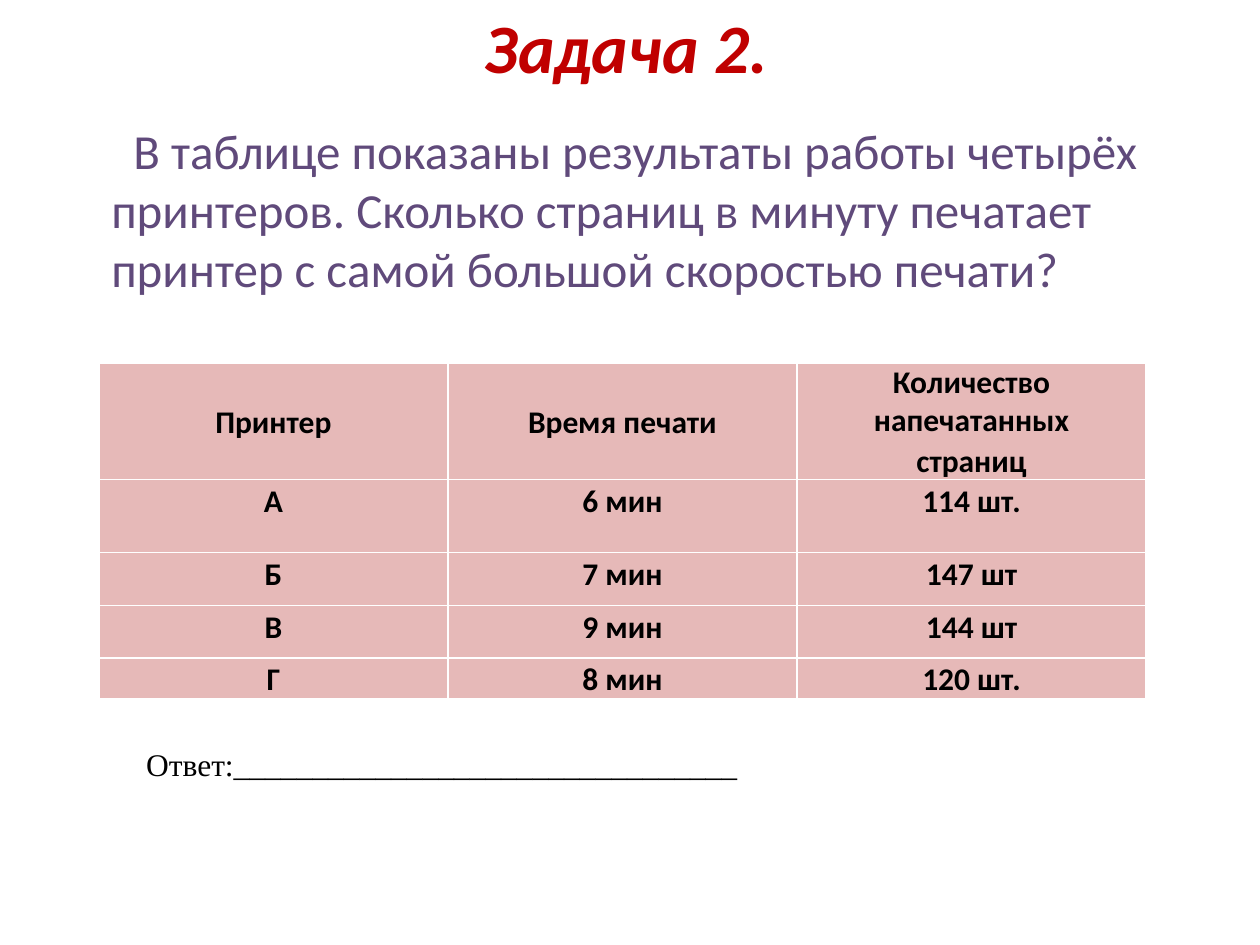
from pptx import Presentation
from pptx.dml.color import RGBColor
from pptx.enum.text import MSO_ANCHOR, PP_ALIGN
from pptx.util import Pt


def style(para, size, color, name="Calibri", bold=False, italic=False):
    """Set the font of a whole paragraph."""
    font = para.font
    font.name, font.size = name, Pt(size)
    font.bold, font.italic = bold, italic
    font.color.rgb = RGBColor.from_string(color)


def add_text(left, top, width, height, text):
    """Add a wrapping text box and return its frame."""
    box = slide.shapes.add_textbox(Pt(left), Pt(top), Pt(width), Pt(height))
    frame = box.text_frame
    frame.word_wrap = True
    frame.text = text
    return frame


deck = Presentation()
deck.slide_width, deck.slide_height = Pt(720), Pt(540)
slide = deck.slides.add_slide(deck.slide_layouts[5])

# Title
title = slide.shapes.title
title.left, title.top, title.width, title.height = Pt(34), Pt(0), Pt(648), Pt(52)
title.text_frame.text = "Задача 2."
title.text_frame.vertical_anchor = MSO_ANCHOR.MIDDLE
para = title.text_frame.paragraphs[0]
para.alignment = PP_ALIGN.CENTER
style(para, 39.6, "C00000", bold=True, italic=True)

# Question, with its first line indented
task = add_text(
    56.5, 65.5, 607.5, 418,
    "В таблице показаны результаты работы четырёх принтеров. "
    "Сколько страниц в минуту печатает принтер с самой большой "
    "скоростью печати?",
)
para = task.paragraphs[0]
para._p.get_or_add_pPr().set("indent", str(Pt(12.7)))
style(para, 28, "604A7B")

# Printer table
rows = [
    ("Принтер", "Время печати", "Количество напечатанных\nстраниц"),
    ("А", "6 мин", "114 шт."),
    ("Б", "7 мин", "147 шт"),
    ("В", "9 мин", "144 шт"),
    ("Г", "8 мин", "120 шт."),
]
heights = [63.4, 41.8, 30.2, 30.2, 21.6]
table = slide.shapes.add_table(
    len(rows), 3, Pt(56.5), Pt(207.6), Pt(598.5), Pt(sum(heights))
).table
table.horz_banding = False
for col in table.columns:
    col.width = Pt(199.5)
for r, (row, height) in enumerate(zip(rows, heights)):
    table.rows[r].height = Pt(height)
    for c, text in enumerate(row):
        cell = table.cell(r, c)
        cell.text = text
        cell.margin_left = cell.margin_right = Pt(5)
        cell.margin_top = cell.margin_bottom = Pt(0)
        cell.vertical_anchor = MSO_ANCHOR.TOP if r else MSO_ANCHOR.MIDDLE
        cell.fill.solid()
        cell.fill.fore_color.rgb = RGBColor.from_string("E6B9B8")
        paras = cell.text_frame.paragraphs
        for para in paras:
            para.alignment = PP_ALIGN.CENTER
            style(para, 18, "000000", bold=True)
        paras[-1].line_spacing = 1.07

# Answer line
reply = add_text(58.3, 420.5, 511, 54, "Ответ:" + "_" * 32)
reply.margin_left = Pt(25.2)
para = reply.paragraphs[0]
para.line_spacing = 1.07
style(para, 18, "000000", name="Times New Roman")

deck.save("out.pptx")
